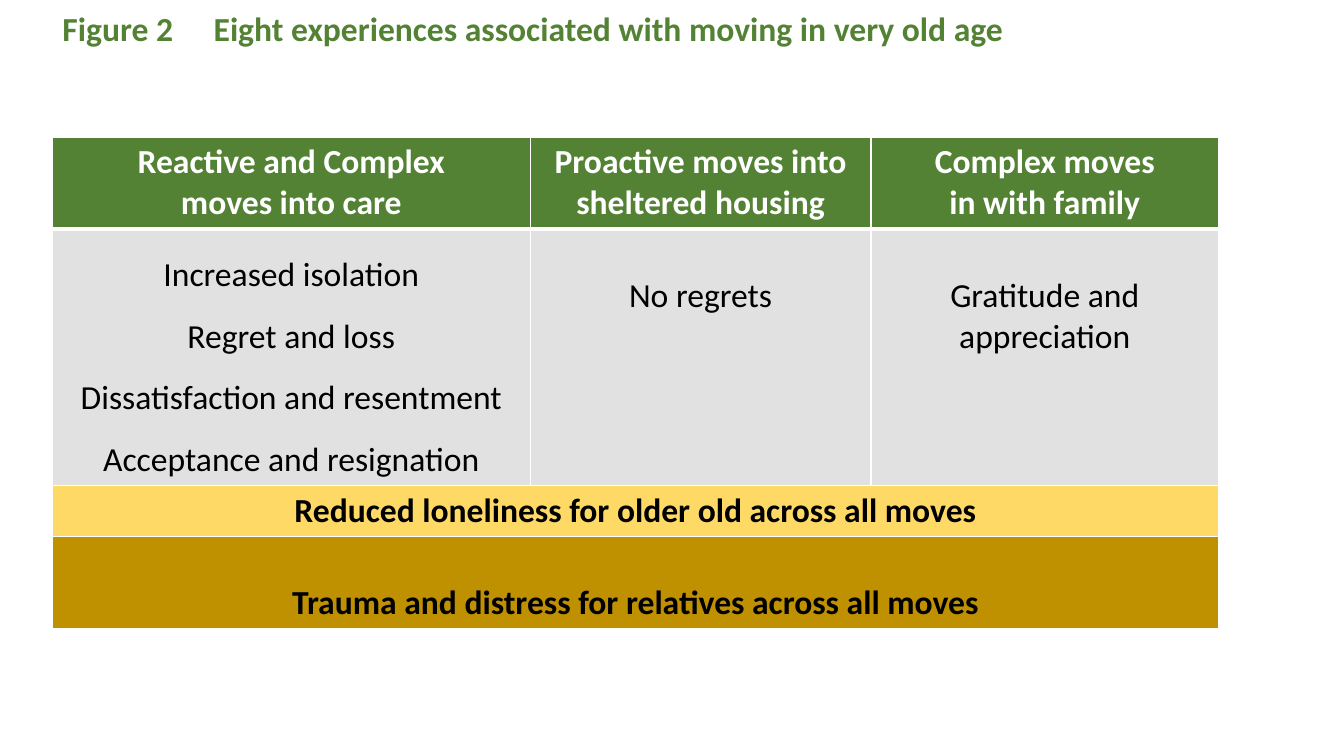
import pptx
import pptx.dml.color
import pptx.enum.text
import pptx.oxml
import pptx.oxml.ns
import pptx.util

Cm, Pt = pptx.util.Cm, pptx.util.Pt
ALIGN = pptx.enum.text.PP_ALIGN
GREEN, GREY, YELLOW, OCHRE = "548235", "E1E1E1", "FFD966", "BF9000"
WHITE, BLACK = "FFFFFF", "000000"
LINE_HEIGHT = Cm(1.03)
CELL_MARGIN = Cm(0.13)


def colour(hex_code):
    return pptx.dml.color.RGBColor.from_string(hex_code)


def set_values(target, values):
    for name, value in values.items():
        setattr(target, name, value)


class FigureSlide:
    """Holds the text style and the slide being built."""

    font = {"name": "Calibri", "size": Pt(24)}

    def __init__(self, deck):
        self.slide = deck.slides.add_slide(deck.slide_layouts[5])

    def fill_text(self, frame, lines, text_colour, bold, paragraph_format):
        frame.text = "\n".join(lines)
        for paragraph in frame.paragraphs:
            set_values(paragraph, paragraph_format)
            for run in paragraph.runs:
                set_values(run.font, {**self.font, "bold": bold})
                run.font.color.rgb = colour(text_colour)

    def title(self, text, left, top, width, height):
        heading = self.slide.shapes.title
        set_values(heading, {"left": left, "top": top, "width": width, "height": height})
        frame = heading.text_frame
        set_values(frame, {
            "margin_top": 0, "margin_bottom": 0, "word_wrap": True,
            "vertical_anchor": pptx.enum.text.MSO_ANCHOR.TOP,
            "auto_size": pptx.enum.text.MSO_AUTO_SIZE.NONE,
        })
        self.fill_text(frame, [text], GREEN, True,
                       {"alignment": ALIGN.LEFT, "line_spacing": 1.0, "space_before": Pt(0)})

    def table(self, left, top, column_widths, row_heights):
        grid = self.slide.shapes.add_table(
            len(row_heights), len(column_widths), left, top,
            sum(column_widths), sum(row_heights)).table
        grid.horz_banding = False
        for column, width in zip(grid.columns, column_widths):
            column.width = width
        for row, height in zip(grid.rows, row_heights):
            row.height = height
        return grid

    def cell(self, cell, lines, fill, text_colour=BLACK, bold=False,
             lines_above=0, line_spacing=1.0):
        cell.margin_top = CELL_MARGIN + lines_above * LINE_HEIGHT
        cell.margin_bottom = CELL_MARGIN
        self.fill_text(cell.text_frame, lines, text_colour, bold,
                       {"alignment": ALIGN.CENTER, "line_spacing": line_spacing})
        cell.fill.solid()
        cell.fill.fore_color.rgb = colour(fill)

    def borders(self, cell, top_width=1, bottom_width=1):
        """Draw white cell borders, widths in points."""
        widths = {"lnL": 1, "lnR": 1, "lnT": top_width, "lnB": bottom_width}
        properties = cell._tc.get_or_add_tcPr()
        for position, (side, width) in enumerate(widths.items()):
            properties.insert(position, pptx.oxml.parse_xml(
                f'<a:{side} {pptx.oxml.ns.nsdecls("a")} w="{Pt(width)}">'
                f'<a:solidFill><a:srgbClr val="{WHITE}"/></a:solidFill></a:{side}>'))


def main():
    deck = pptx.Presentation()
    set_values(deck, {"slide_width": Cm(33.87), "slide_height": Cm(19.05)})
    figure = FigureSlide(deck)
    figure.title("Figure 2 \tEight experiences associated with moving in very old age",
                 Cm(1.32), Cm(0.2), Cm(31.2), Cm(1.63))

    moves = [
        (["Reactive and Complex", "moves into care"],
         ["Increased isolation", "Regret and loss",
          "Dissatisfaction and resentment", "Acceptance and resignation"],
         {"line_spacing": 1.5}),
        (["Proactive moves into", "sheltered housing"], ["No regrets"],
         {"lines_above": 1}),
        (["Complex moves", "in with family"], ["Gratitude and appreciation"],
         {"lines_above": 1}),
    ]
    shared_experiences = [
        ("Reduced loneliness for older old across all moves", YELLOW, 0),
        ("Trauma and distress for relatives across all moves", OCHRE, 1),
    ]
    grid = figure.table(Cm(1.32), Cm(3.45),
                        [Cm(12.04), Cm(8.59), Cm(8.76)],
                        [Cm(2.31), Cm(6.32), Cm(1.29), Cm(2.31)])

    for column, (move, experiences, layout) in enumerate(moves):
        figure.cell(grid.cell(0, column), move, GREEN, WHITE, bold=True)
        figure.cell(grid.cell(1, column), experiences, GREY, **layout)
        figure.borders(grid.cell(0, column), bottom_width=3)
        figure.borders(grid.cell(1, column), top_width=3)

    for row, (experience, fill, lines_above) in enumerate(shared_experiences, start=2):
        band = grid.cell(row, 0)
        band.merge(grid.cell(row, len(moves) - 1))
        figure.cell(band, [experience], fill, bold=True, lines_above=lines_above)
        for column in range(len(moves)):
            figure.borders(grid.cell(row, column))

    deck.save("out.pptx")


if __name__ == "__main__":
    main()
